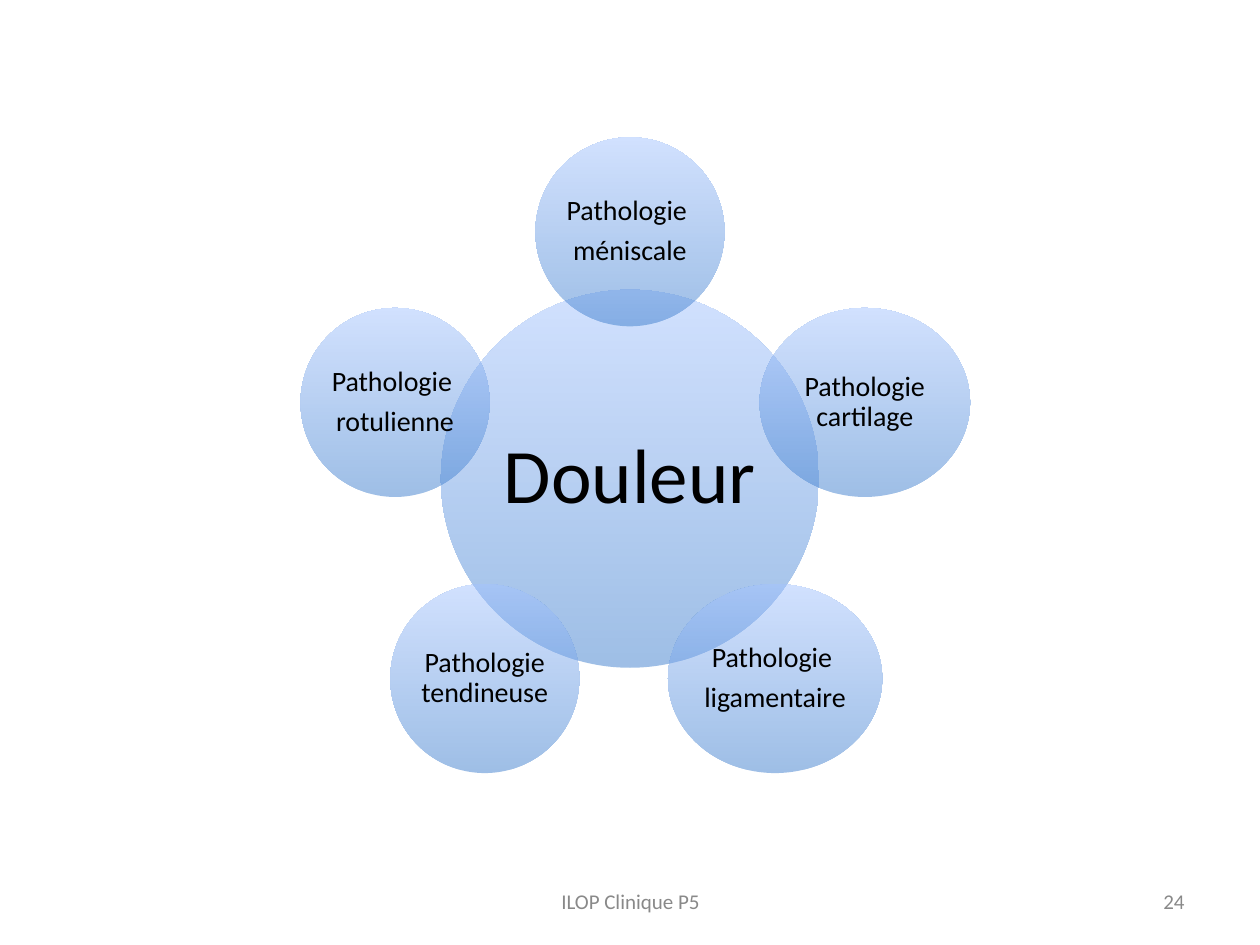
from dataclasses import dataclass
from math import cos, radians, sin

from lxml import etree
from pptx import Presentation
from pptx import util as u
from pptx.dml.color import RGBColor
from pptx.enum import shapes, text
from pptx.oxml import ns
from pptx.shapes.autoshape import Shape
from pptx.slide import Slide

WIDTH, HEIGHT = u.Inches(10), u.Inches(7.5)


@dataclass(frozen=True)
class Theme:
    font: str = "Calibri"
    ink: str = "000000"
    muted: str = "898989"
    bubble_bottom: str = "3F7FCE"
    bubble_top: str = "A4C4FF"
    opacity: int = 50
    hub_size: int = 44
    satellite_size: int = 16
    footer_size: int = 12
    line_spacing: float = 0.9
    paragraph_gap: float = 0.35


@dataclass(frozen=True)
class Bubble:
    lines: tuple[str, ...]
    width: float = 0.15
    height: float = 0.15


@dataclass(frozen=True)
class Footer:
    label: str
    left: float
    width: float
    align: text.PP_ALIGN


THEME = Theme()
CENTER_X, CENTER_Y, ORBIT = 0.5, 0.38, 0.196
FOOTER_TOP, FOOTER_HEIGHT = 0.695, 0.04
BUBBLE_INSET = u.Inches(0.02)

HUB = Bubble(("Douleur",), 0.3, 0.3)
SATELLITES = (
    Bubble(("Pathologie ", "méniscale")),
    Bubble(("Pathologie cartilage",), width=0.167),
    Bubble(("Pathologie ", "ligamentaire"), width=0.17),
    Bubble(("Pathologie tendineuse",)),
    Bubble(("Pathologie ", "rotulienne")),
)
FOOTERS = (
    Footer("ILOP Clinique P5", 0.342, 0.317, text.PP_ALIGN.CENTER),
    Footer("24", 0.717, 0.233, text.PP_ALIGN.RIGHT),
)


def share(fraction: float) -> int:
    return round(WIDTH * fraction)


def write_lines(shape: Shape, lines: tuple[str, ...], size: int, color: str,
                align: text.PP_ALIGN) -> None:
    frame = shape.text_frame
    frame.word_wrap = True
    frame.vertical_anchor = text.MSO_ANCHOR.MIDDLE
    for index, line in enumerate(lines):
        paragraph = frame.add_paragraph() if index else frame.paragraphs[0]
        paragraph.alignment = align
        run = paragraph.add_run()
        run.text = line
        run.font.name = THEME.font
        run.font.size = u.Pt(size)
        run.font.color.rgb = RGBColor.from_string(color)


def fill_bubble(shape: Shape) -> None:
    shape.fill.gradient()
    shape.fill.gradient_angle = 90
    colors = (THEME.bubble_bottom, THEME.bubble_top)
    for position, (stop, color) in enumerate(zip(shape.fill.gradient_stops, colors)):
        stop.position = position
        stop.color.rgb = RGBColor.from_string(color)
    gradient = shape.element.spPr.find(ns.qn("a:gradFill"))
    for color in gradient.iter(ns.qn("a:srgbClr")):
        etree.SubElement(color, ns.qn("a:alpha"), val=str(THEME.opacity * 1000))


def draw_bubble(slide: Slide, bubble: Bubble, x: float, y: float, size: int) -> None:
    shape = slide.shapes.add_shape(
        shapes.MSO_SHAPE.OVAL,
        share(x - bubble.width / 2), share(y - bubble.height / 2),
        share(bubble.width), share(bubble.height),
    )
    shape.shadow.inherit = False
    shape.line.fill.background()
    fill_bubble(shape)
    frame = shape.text_frame
    frame.margin_left = frame.margin_right = BUBBLE_INSET
    frame.margin_top = frame.margin_bottom = BUBBLE_INSET
    write_lines(shape, bubble.lines, size, THEME.ink, text.PP_ALIGN.CENTER)
    for paragraph in frame.paragraphs:
        paragraph.line_spacing = THEME.line_spacing
        paragraph.space_after = u.Pt(size * THEME.paragraph_gap)


def draw_footer(slide: Slide, footer: Footer) -> None:
    box = slide.shapes.add_textbox(
        share(footer.left), share(FOOTER_TOP), share(footer.width), share(FOOTER_HEIGHT)
    )
    write_lines(box, (footer.label,), THEME.footer_size, THEME.muted, footer.align)


def main() -> None:
    presentation = Presentation()
    presentation.slide_width, presentation.slide_height = WIDTH, HEIGHT
    slide = presentation.slides.add_slide(presentation.slide_layouts[6])
    for footer in FOOTERS:
        draw_footer(slide, footer)
    draw_bubble(slide, HUB, CENTER_X, CENTER_Y, THEME.hub_size)
    for index, satellite in enumerate(SATELLITES):
        angle = radians(index * 360 / len(SATELLITES))
        draw_bubble(slide, satellite, CENTER_X + ORBIT * sin(angle),
                    CENTER_Y - ORBIT * cos(angle), THEME.satellite_size)
    presentation.save("out.pptx")


if __name__ == "__main__":
    main()
